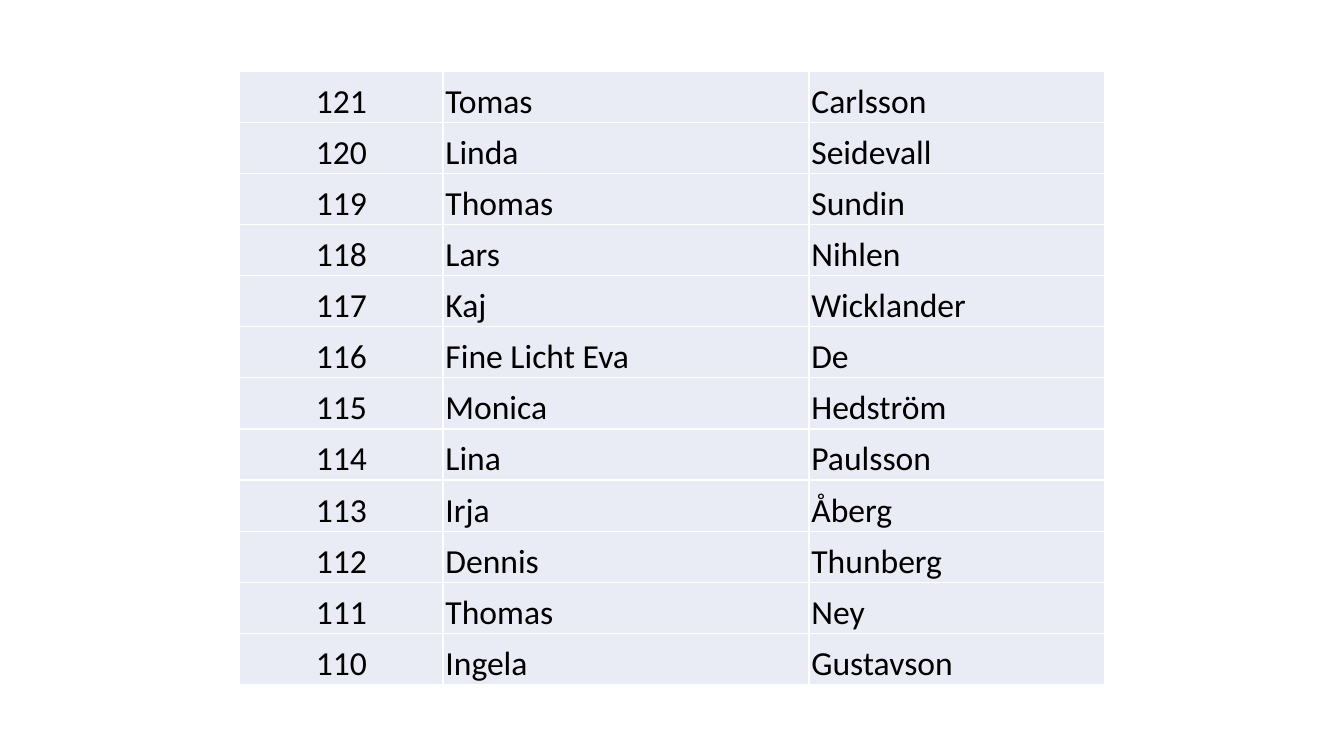
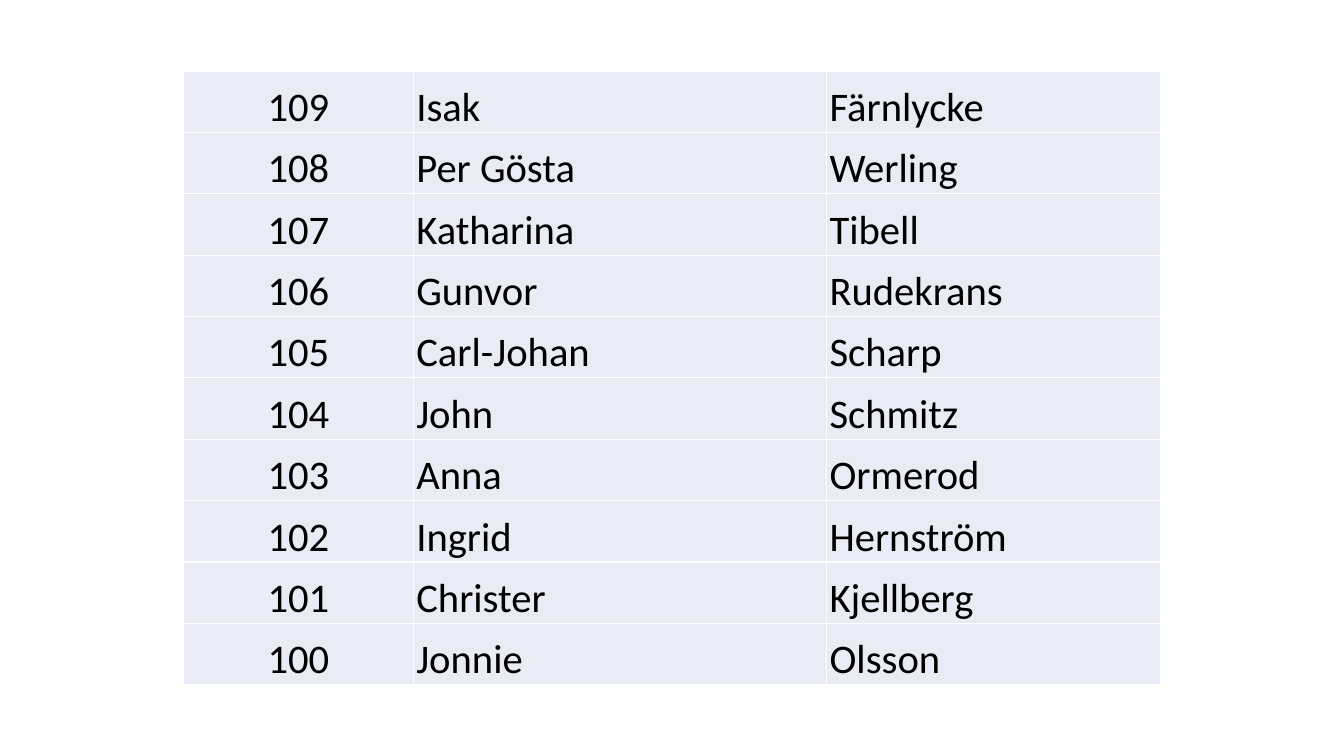
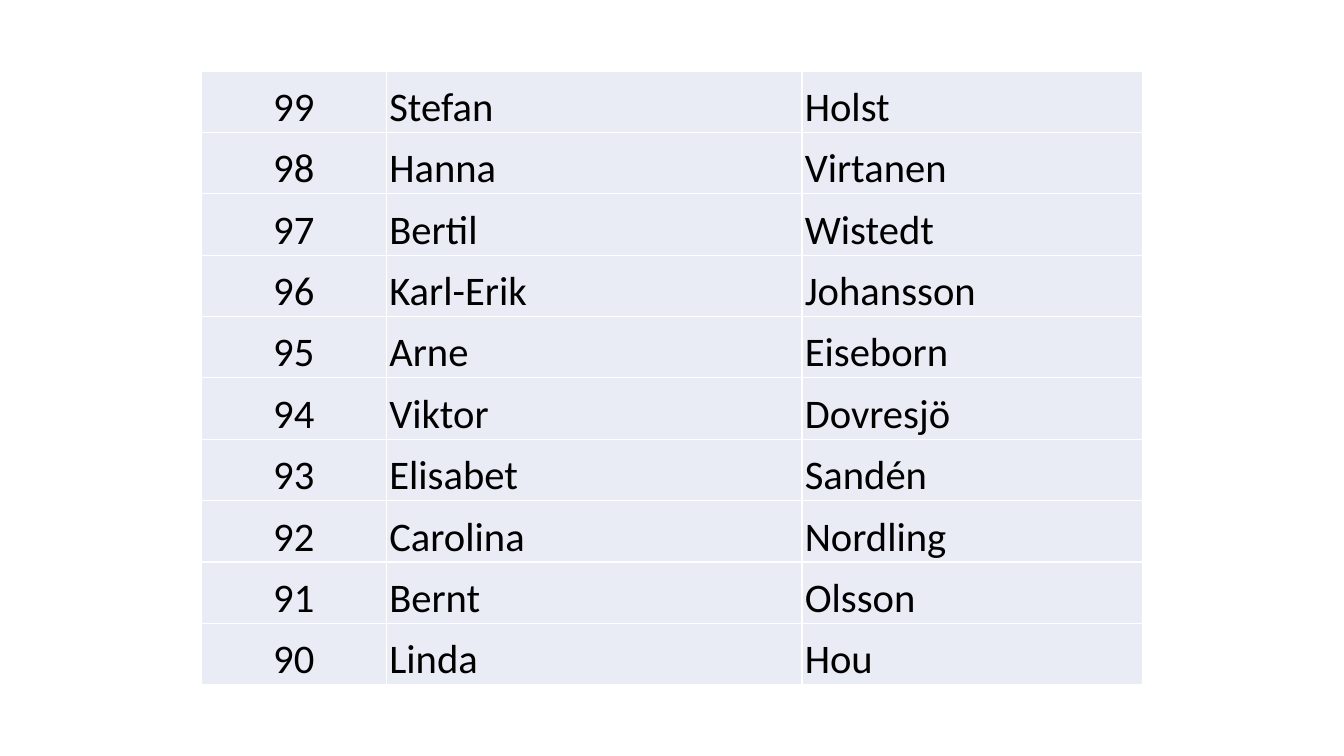
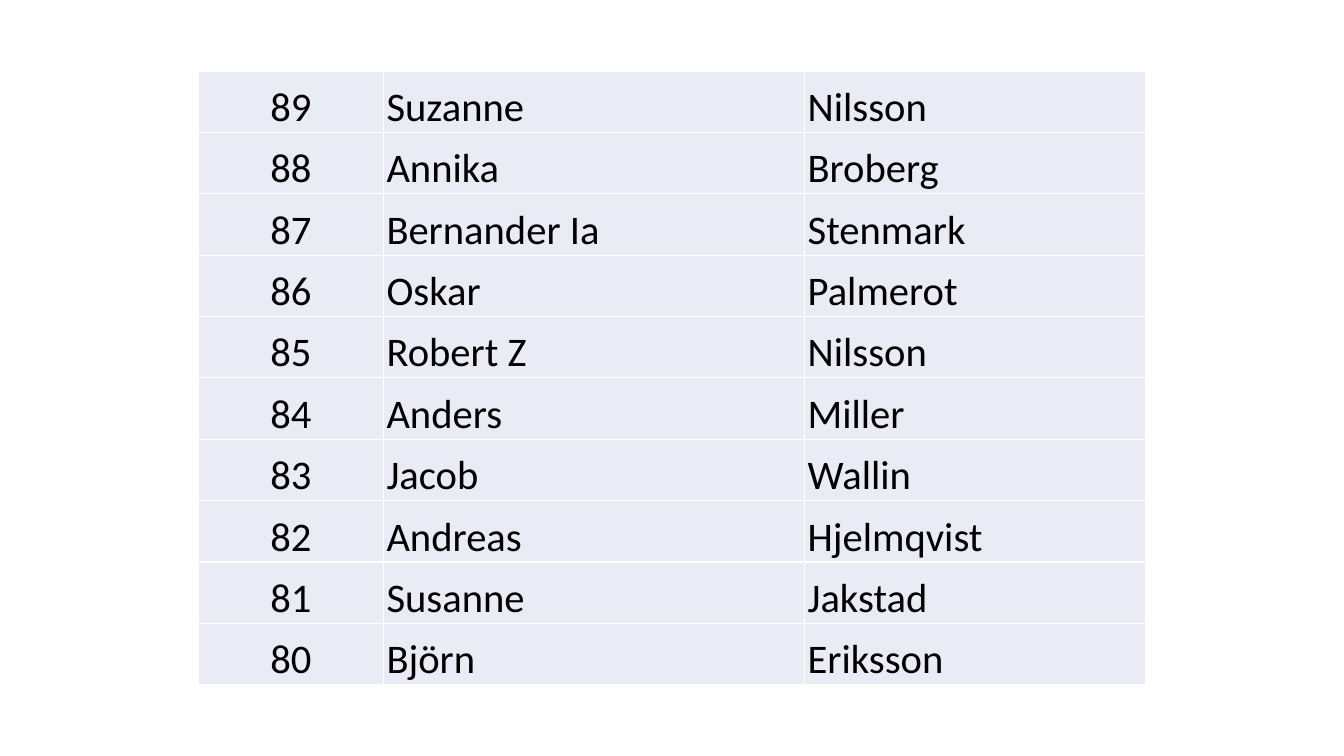
import pptx
import pptx.dml.color
import pptx.enum.text
import pptx.oxml
import pptx.oxml.ns
import pptx.util

Pt = pptx.util.Pt
ALIGN = pptx.enum.text.PP_ALIGN

COLOURS = {"text": "000000", "cell": "E9EBF5", "border": "FFFFFF"}
SLIDE_WIDTH, SLIDE_HEIGHT = 960, 540
TABLE_HEIGHT = 438.4
BLANK_LAYOUT = 6

# First number, text size, column widths, then (first name, surname) by falling number
NAME_LISTS = [
    (121, 24, (145.4, 261.4, 211), [
        ("Tomas", "Carlsson"),
        ("Linda", "Seidevall"),
        ("Thomas", "Sundin"),
        ("Lars", "Nihlen"),
        ("Kaj", "Wicklander"),
        ("Fine Licht Eva", "De"),
        ("Monica", "Hedström"),
        ("Lina", "Paulsson"),
        ("Irja", "Åberg"),
        ("Dennis", "Thunberg"),
        ("Thomas", "Ney"),
        ("Ingela", "Gustavson"),
    ]),
    (109, 29, (164.4, 295.2, 238.4), [
        ("Isak", "Färnlycke"),
        ("Per Gösta", "Werling"),
        ("Katharina", "Tibell"),
        ("Gunvor", "Rudekrans"),
        ("Carl-Johan", "Scharp"),
        ("John", "Schmitz"),
        ("Anna", "Ormerod"),
        ("Ingrid", "Hernström"),
        ("Christer", "Kjellberg"),
        ("Jonnie", "Olsson"),
    ]),
    (99, 29, (132.4, 296.8, 243.4), [
        ("Stefan", "Holst"),
        ("Hanna", "Virtanen"),
        ("Bertil", "Wistedt"),
        ("Karl-Erik", "Johansson"),
        ("Arne", "Eiseborn"),
        ("Viktor", "Dovresjö"),
        ("Elisabet", "Sandén"),
        ("Carolina", "Nordling"),
        ("Bernt", "Olsson"),
        ("Linda", "Hou"),
    ]),
    (89, 29, (132.4, 300.8, 243.4), [
        ("Suzanne", "Nilsson"),
        ("Annika", "Broberg"),
        ("Bernander Ia", "Stenmark"),
        ("Oskar", "Palmerot"),
        ("Robert Z", "Nilsson"),
        ("Anders", "Miller"),
        ("Jacob", "Wallin"),
        ("Andreas", "Hjelmqvist"),
        ("Susanne", "Jakstad"),
        ("Björn", "Eriksson"),
    ]),
]


def rgb(name):
    return pptx.dml.color.RGBColor.from_string(COLOURS[name])


def write_text(frame, text, size, align=ALIGN.LEFT, colour="text", font="Calibri"):
    paragraph = frame.paragraphs[0]
    paragraph.alignment = align
    run = paragraph.add_run()
    run.text = text
    run.font.size = Pt(size)
    run.font.name = font
    run.font.color.rgb = rgb(colour)


def add_borders(cell, width=1):
    properties = cell._tc.get_or_add_tcPr()
    for side in ("lnL", "lnR", "lnT", "lnB"):
        properties.append(pptx.oxml.parse_xml(
            f'<a:{side} {pptx.oxml.ns.nsdecls("a")} w="{Pt(width)}"><a:solidFill>'
            f'<a:srgbClr val="{COLOURS["border"]}"/></a:solidFill></a:{side}>'))


class Deck:
    def __init__(self):
        self.presentation = pptx.Presentation()
        self.presentation.slide_width = Pt(SLIDE_WIDTH)
        self.presentation.slide_height = Pt(SLIDE_HEIGHT)
        self.slide = None

    def add_slide(self):
        layout = self.presentation.slide_layouts[BLANK_LAYOUT]
        self.slide = self.presentation.slides.add_slide(layout)

    def style_cell(self, cell, text, size, align):
        cell.margin_left = cell.margin_right = cell.margin_top = Pt(round(size * 0.07, 2))
        cell.margin_bottom = 0
        cell.vertical_anchor = pptx.enum.text.MSO_ANCHOR.BOTTOM
        add_borders(cell)
        cell.fill.solid()
        cell.fill.fore_color.rgb = rgb("cell")
        write_text(cell.text_frame, text, size, align=align)

    def name_table(self, first_number, size, widths, names):
        """Add a table of numbered names in the middle of the slide."""
        total = sum(widths)
        table = self.slide.shapes.add_table(
            len(names), len(widths),
            Pt((SLIDE_WIDTH - total) / 2), Pt((SLIDE_HEIGHT - TABLE_HEIGHT) / 2),
            Pt(total), Pt(TABLE_HEIGHT)).table
        table.first_row = table.horz_banding = False
        for column, width in zip(table.columns, widths):
            column.width = Pt(width)
        for index, (row, name) in enumerate(zip(table.rows, names)):
            row.height = Pt(TABLE_HEIGHT / len(names))
            number, first_name, surname = row.cells
            self.style_cell(number, str(first_number - index), size, ALIGN.CENTER)
            self.style_cell(first_name, name[0], size, ALIGN.LEFT)
            self.style_cell(surname, name[1], size, ALIGN.LEFT)


def main():
    deck = Deck()
    for name_list in NAME_LISTS:
        deck.add_slide()
        deck.name_table(*name_list)
    deck.presentation.save("out.pptx")


if __name__ == "__main__":
    main()
